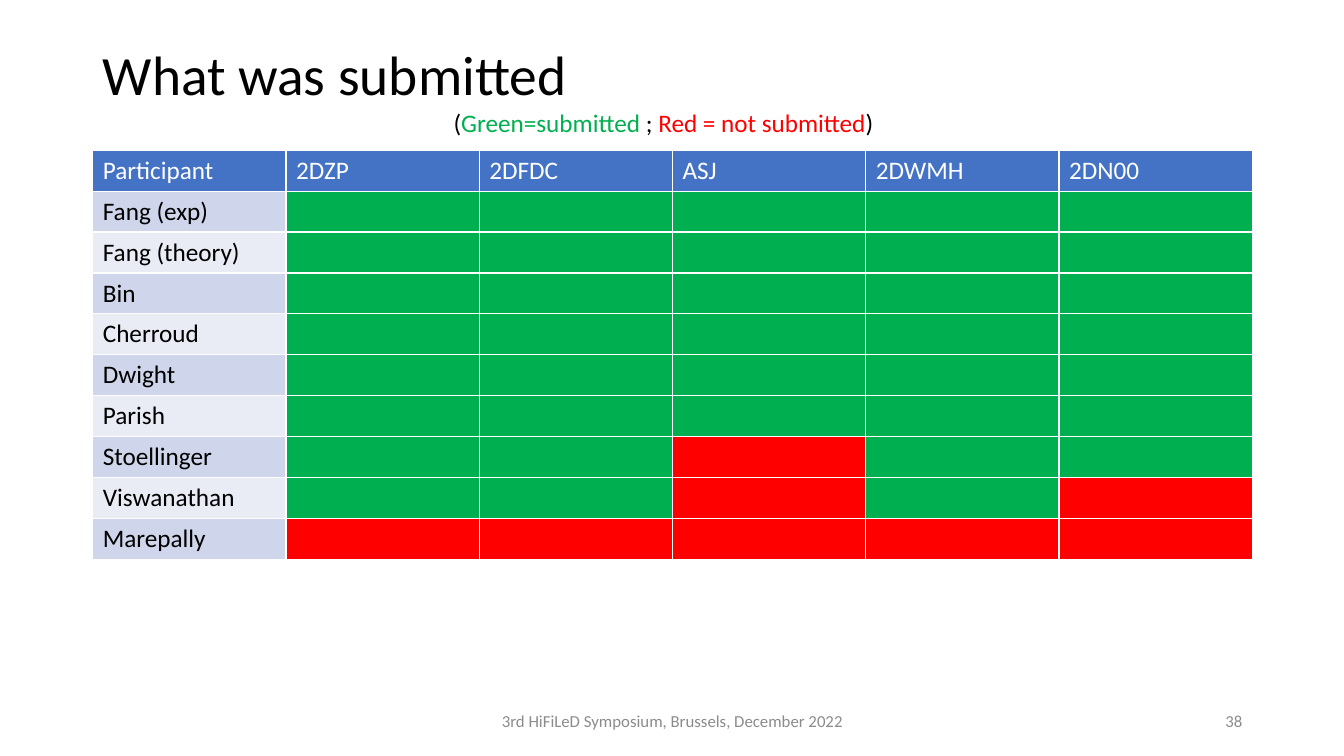
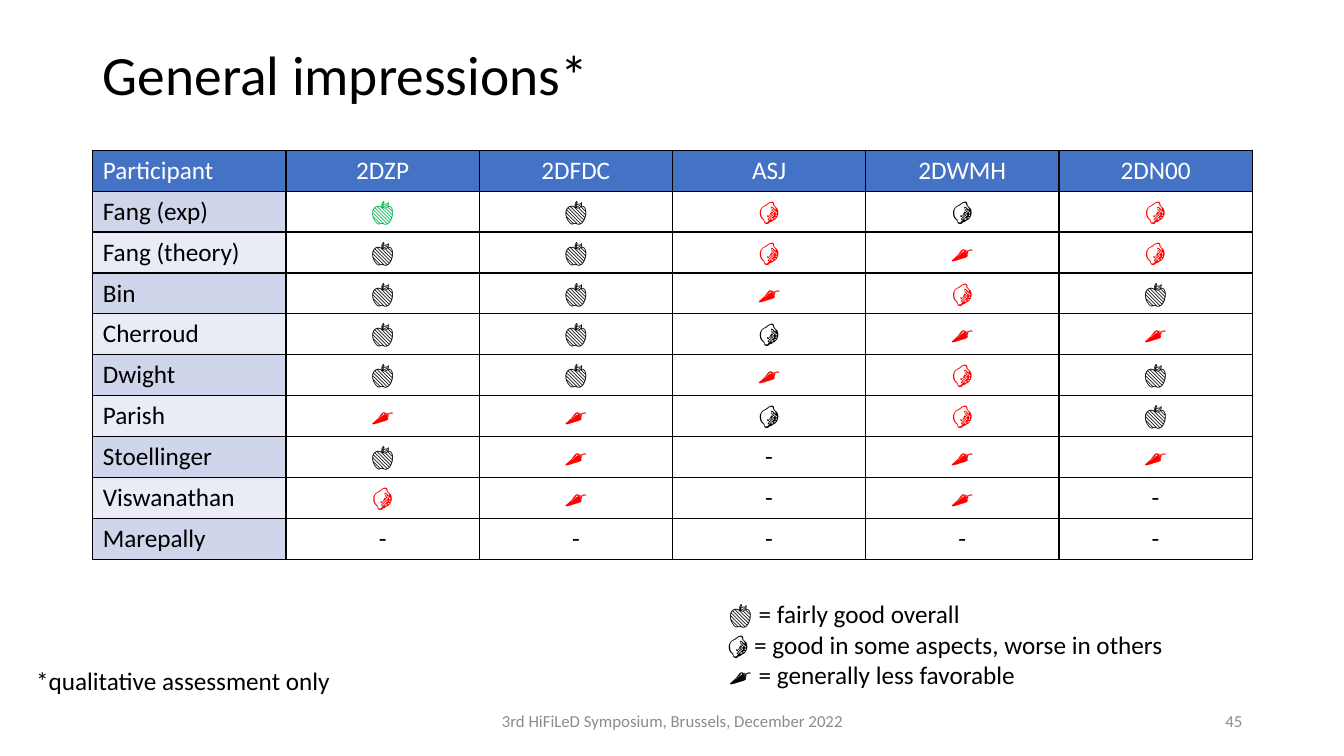
"""Build two slides that compare submissions and results per participant."""
from lxml import etree
from pptx import Presentation
from pptx.dml.color import RGBColor
from pptx.enum import text
from pptx.oxml import ns
from pptx.util import Inches, Pt

FONT = "Calibri"
BLACK = RGBColor(0x00, 0x00, 0x00)
WHITE = RGBColor(0xFF, 0xFF, 0xFF)
GRAY = RGBColor(0x8C, 0x8C, 0x8C)
BLUE = RGBColor(0x44, 0x72, 0xC4)
BANDS = (RGBColor(0xCF, 0xD5, 0xEA), RGBColor(0xE9, 0xEB, 0xF5))
GREEN = RGBColor(0x00, 0xB0, 0x50)
RED = RGBColor(0xFF, 0x00, 0x00)
LEFT, CENTER, RIGHT = text.PP_ALIGN.LEFT, text.PP_ALIGN.CENTER, text.PP_ALIGN.RIGHT

CASES = ["2DZP", "2DFDC", "ASJ", "2DWMH", "2DN00"]
GRADES = {
    "Fang (exp)": "AaLlL",
    "Fang (theory)": "aaLCL",
    "Bin": "aaCLa",
    "Cherroud": "aalCC",
    "Dwight": "aaCLa",
    "Parish": "CClLa",
    "Stoellinger": "aC-CC",
    "Viswanathan": "LC-C-",
    "Marepally": "-----",
}
SYMBOLS = {
    "A": ("🍏", GREEN),
    "a": ("🍏", BLACK),
    "L": ("🍋", RED),
    "l": ("🍋", BLACK),
    "C": ("🌶", RED),
    "-": ("-", BLACK),
}
SLIDES = [
    ("What was submitted", "38", WHITE, LEFT),
    ("General impressions*", "45", BLACK, CENTER),
]


def add_text(slide, box, lines, size=18, color=BLACK, alignment=LEFT, footer=False):
    """Add a text box; each line is a list of (wording, colour) runs."""
    frame = slide.shapes.add_textbox(*map(Inches, box)).text_frame
    frame.word_wrap = footer
    if footer:
        frame.vertical_anchor = text.MSO_ANCHOR.MIDDLE
    else:
        frame.auto_size = text.MSO_AUTO_SIZE.SHAPE_TO_FIT_TEXT
    for index, line in enumerate(lines):
        paragraph = frame.add_paragraph() if index else frame.paragraphs[0]
        paragraph.alignment = alignment
        paragraph.font.name, paragraph.font.size = FONT, Pt(size)
        for wording, run_color in line:
            run = paragraph.add_run()
            run.text = wording
            run.font.name, run.font.size = FONT, Pt(size)
            run.font.color.rgb = run_color or color


def style_cell(cell, wording, color, fill, border, alignment):
    """Set the borders, fill and text of a table cell."""
    properties = cell._tc.get_or_add_tcPr()
    for side in ("lnL", "lnR", "lnT", "lnB"):
        line = etree.SubElement(properties, ns.qn(f"a:{side}"), w=str(Pt(1)))
        solid = etree.SubElement(line, ns.qn("a:solidFill"))
        etree.SubElement(solid, ns.qn("a:srgbClr"), val=str(border))
    if fill is None:
        cell.fill.background()
    else:
        cell.fill.solid()
        cell.fill.fore_color.rgb = fill
    cell.text = wording
    paragraph = cell.text_frame.paragraphs[0]
    paragraph.alignment = alignment
    for font in [paragraph.font] + [run.font for run in paragraph.runs]:
        font.name, font.size, font.bold = FONT, Pt(18), False
        font.color.rgb = color


presentation = Presentation()
presentation.slide_width, presentation.slide_height = Inches(13.33), Inches(7.5)

for heading, number, border, alignment in SLIDES:
    slide = presentation.slides.add_slide(presentation.slide_layouts[5])
    title = slide.shapes.title
    title.left, title.top = Inches(0.92), Inches(0.4)
    title.width, title.height = Inches(11.5), Inches(0.74)
    title.text_frame.text = heading
    title.text_frame.auto_size = text.MSO_AUTO_SIZE.NONE
    title.text_frame.vertical_anchor = text.MSO_ANCHOR.MIDDLE
    paragraph = title.text_frame.paragraphs[0]
    paragraph.alignment, paragraph.line_spacing = LEFT, 0.9
    paragraph.font.name, paragraph.font.size = FONT, Pt(39.6)
    paragraph.font.color.rgb = BLACK

    add_text(slide, (4.42, 6.95, 4.5, 0.4),
             [[("3rd HiFiLeD Symposium, Brussels, December 2022", None)]],
             12, GRAY, CENTER, footer=True)
    add_text(slide, (9.42, 6.95, 3, 0.4), [[(number, None)]], 12, GRAY, RIGHT, footer=True)

    table = slide.shapes.add_table(
        len(GRADES) + 1, len(CASES) + 1,
        Inches(0.92), Inches(1.49), Inches(11.5), Inches(4.06)).table
    table.horz_banding = False
    for column, label in enumerate(["Participant"] + CASES):
        style_cell(table.cell(0, column), label, WHITE, BLUE, border,
                   alignment if column else LEFT)
    for row, (participant, grades) in enumerate(GRADES.items(), start=1):
        style_cell(table.cell(row, 0), participant, BLACK, BANDS[(row - 1) % 2], border, LEFT)
        for column, grade in enumerate(grades, start=1):
            if number == "38":
                wording, color, fill = "", BLACK, RED if grade == "-" else GREEN
            else:
                wording, color = SYMBOLS[grade]
                fill = None
            style_cell(table.cell(row, column), wording, color, fill, border, alignment)

submitted, impressions = presentation.slides
add_text(submitted, (4.4, 1.02, 4.43, 0.4), [[
    ("(", None), ("Green=submitted ", GREEN), ("; ", None),
    ("Red = not submitted", RED), (")", None)]])
add_text(impressions, (7.12, 5.89, 4.61, 1.01), [
    [("🍏 = fairly good overall", None)],
    [("🍋 = good in some aspects, worse in others", None)],
    [("🌶 = generally less favorable", None)]])
add_text(impressions, (0.26, 6.55, 3.15, 0.4), [[("*qualitative assessment only", None)]])

presentation.save("out.pptx")
